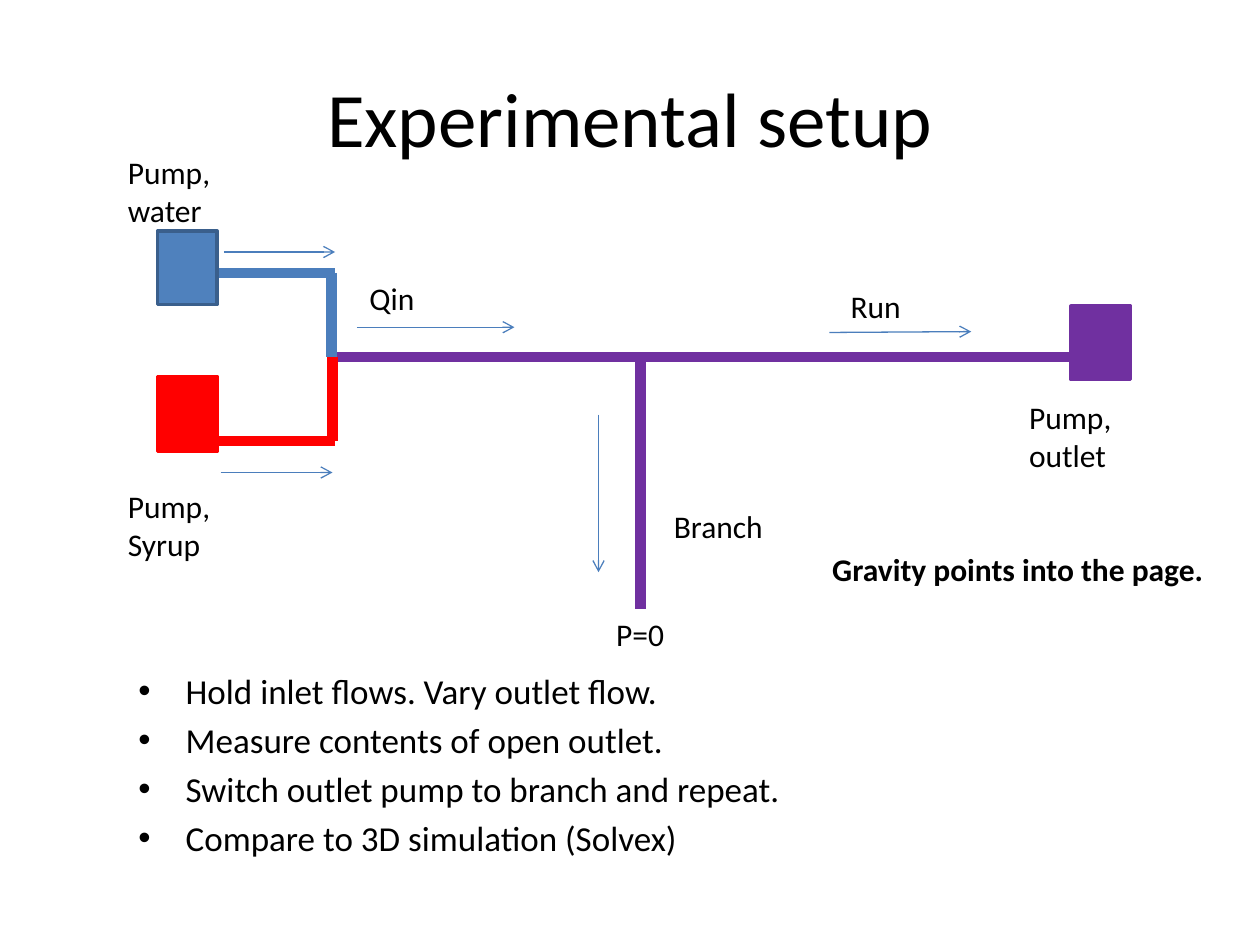
from pptx import Presentation
from pptx.dml.color import RGBColor
from pptx.enum.shapes import MSO_CONNECTOR, MSO_SHAPE
from pptx.enum.text import MSO_ANCHOR, MSO_AUTO_SIZE, PP_ALIGN
from pptx.oxml.ns import qn
from pptx.util import Pt
from lxml.etree import SubElement

BLUE, RED, PURPLE, BLACK = "4B7EBC", "FF0000", "7030A0", "000000"


def color(code):
    return RGBColor.from_string(code)


def style(item, values):
    for name, value in values.items():
        setattr(item, name, value)


def text(slide, box, lines, size, frame={}, para={}, bold=False):
    shape = slide.shapes.add_textbox(*map(Pt, box))
    body = shape.text_frame
    body.text = "\n".join(lines)
    style(body, frame)
    for part in body.paragraphs:
        style(part, para)
        font = part.runs[0].font
        style(font, {"name": "Calibri", "size": Pt(size), "bold": bold})
        font.color.rgb = color(BLACK)
    return body


def label(slide, box, words, bold=False):
    frame = {"word_wrap": False, "auto_size": MSO_AUTO_SIZE.SHAPE_TO_FIT_TEXT}
    text(slide, box, words.split("\n"), 18, frame, bold=bold)


def line(slide, ends, code, width, arrow=False):
    link = slide.shapes.add_connector(MSO_CONNECTOR.STRAIGHT, *map(Pt, ends))
    link.line.color.rgb = color(code)
    link.line.width = Pt(width)
    props = link._element.spPr
    if arrow:
        SubElement(props.find(qn("a:ln")), qn("a:tailEnd"), type="arrow")
    SubElement(props, qn("a:effectLst"))


def pump(slide, box, fill, edge):
    shape = slide.shapes.add_shape(MSO_SHAPE.RECTANGLE, *map(Pt, box))
    shape.shadow.inherit = False
    shape.fill.solid()
    shape.fill.fore_color.rgb = color(fill)
    shape.line.color.rgb = color(edge)
    shape.line.width = Pt(2)


def title(slide, box):
    frame = {"word_wrap": True, "vertical_anchor": MSO_ANCHOR.MIDDLE}
    text(slide, box, ["Experimental setup"], 44, frame,
         {"alignment": PP_ALIGN.CENTER})


def setup(slide, left, top):
    def ends(x1, y1, x2, y2):
        return left + x1, top + y1, left + x2, top + y2

    def area(x, y, wide, high):
        return left + x, top + y, wide, high

    for code, *pipe in [
        (PURPLE, 125.5, 120, 552, 120),
        (BLUE, 58, 72, 125.5, 72),
        (RED, 58, 168, 125.5, 168),
        (BLUE, 123.5, 72, 123.5, 120),
        (RED, 124, 120, 124, 168),
        (PURPLE, 300, 120, 300, 264),
    ]:
        line(slide, ends(*pipe), code, 6)

    for flow in [
        (62, 60, 125.5, 60),
        (60, 186, 124, 186),
        (408, 106, 489, 105.5),
        (138, 103, 228, 103),
        (276, 153, 276, 243),
    ]:
        line(slide, ends(*flow), BLUE, 0.75, True)

    for x, y, high, fill, edge in [
        (24, 48, 42, "4F81BD", "3A5F8C"),
        (24, 131, 43, RED, RED),
        (546, 91, 42, PURPLE, PURPLE),
    ]:
        pump(slide, area(x, y, 34, high), fill, edge)

    for words, x, y, wide in [
        ("Pump,\nwater", 0, 0, 66),
        ("Pump,\nSyrup", 0, 191, 66),
        ("Pump,\noutlet", 515, 140, 66),
        ("Qin", 138, 72, 40),
        ("Run", 413, 76.5, 44),
        ("Branch", 312, 202, 66),
        ("P=0", 279, 264, 42.5),
    ]:
        label(slide, area(x, y, wide, 51 if "\n" in words else 29), words)
    label(slide, area(402.5, 227, 230, 29),
          "Gravity points into the page.", True)


def steps(slide, box):
    lines = [
        "Hold inlet flows. Vary outlet flow.",
        "Measure contents of open outlet.",
        "Switch outlet pump to branch and repeat.",
        "Compare to 3D simulation (Solvex)",
    ]
    body = text(slide, box, lines, 20, {"word_wrap": True},
                {"space_before": Pt(4)})
    for part in body.paragraphs:
        props = part._p.get_or_add_pPr()
        props.set("marL", str(Pt(27)))
        props.set("indent", str(Pt(-27)))
        SubElement(props, qn("a:buFont"), typeface="Arial")
        SubElement(props, qn("a:buChar"), char="•")


def main():
    deck = Presentation()
    style(deck, {"slide_width": Pt(720), "slide_height": Pt(540)})
    slide = deck.slides.add_slide(deck.slide_layouts[6])
    title(slide, (36, 21.6, 648, 90))
    steps(slide, (72, 379, 648, 143))
    setup(slide, 66, 84)
    deck.save("out.pptx")


if __name__ == "__main__":
    main()
